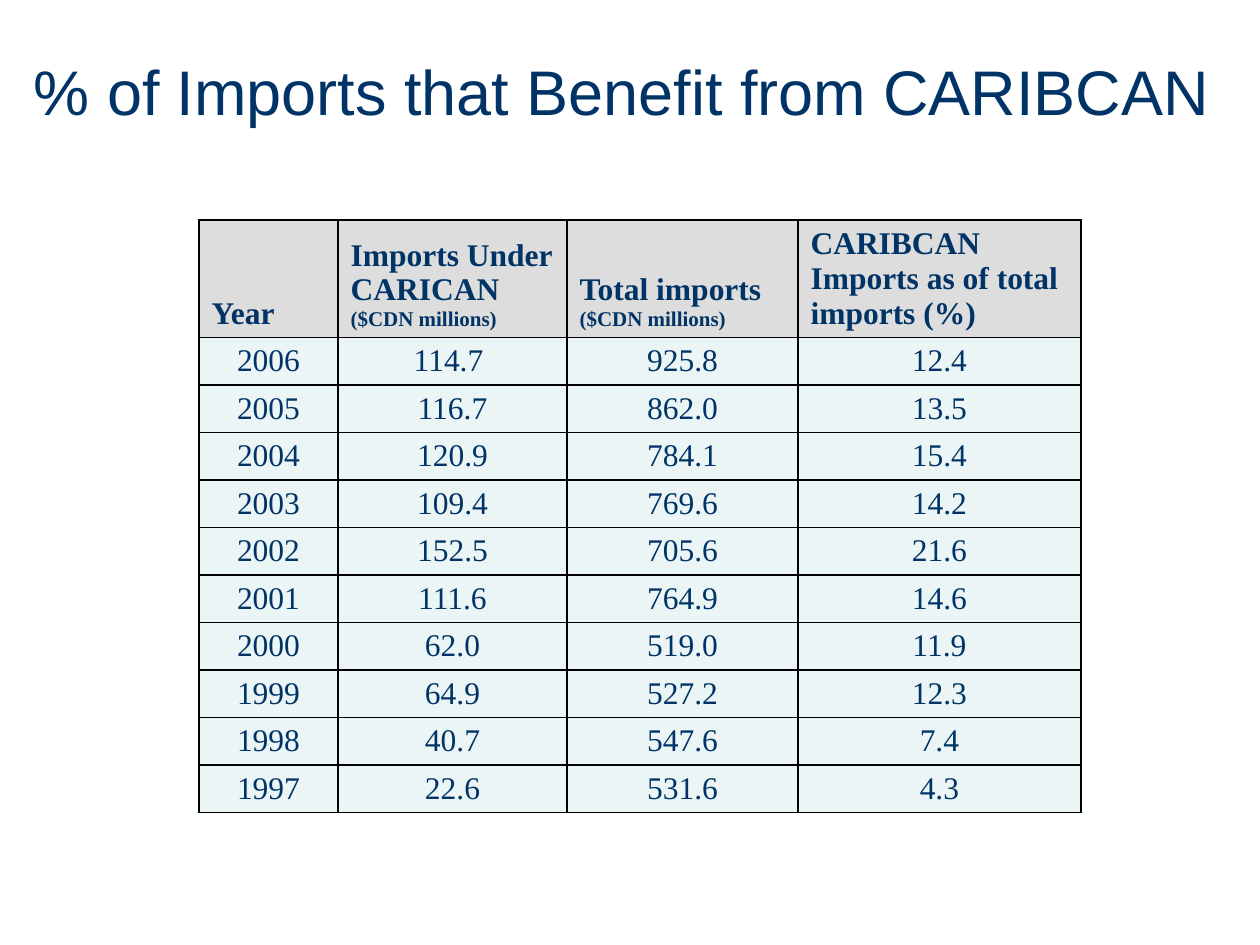
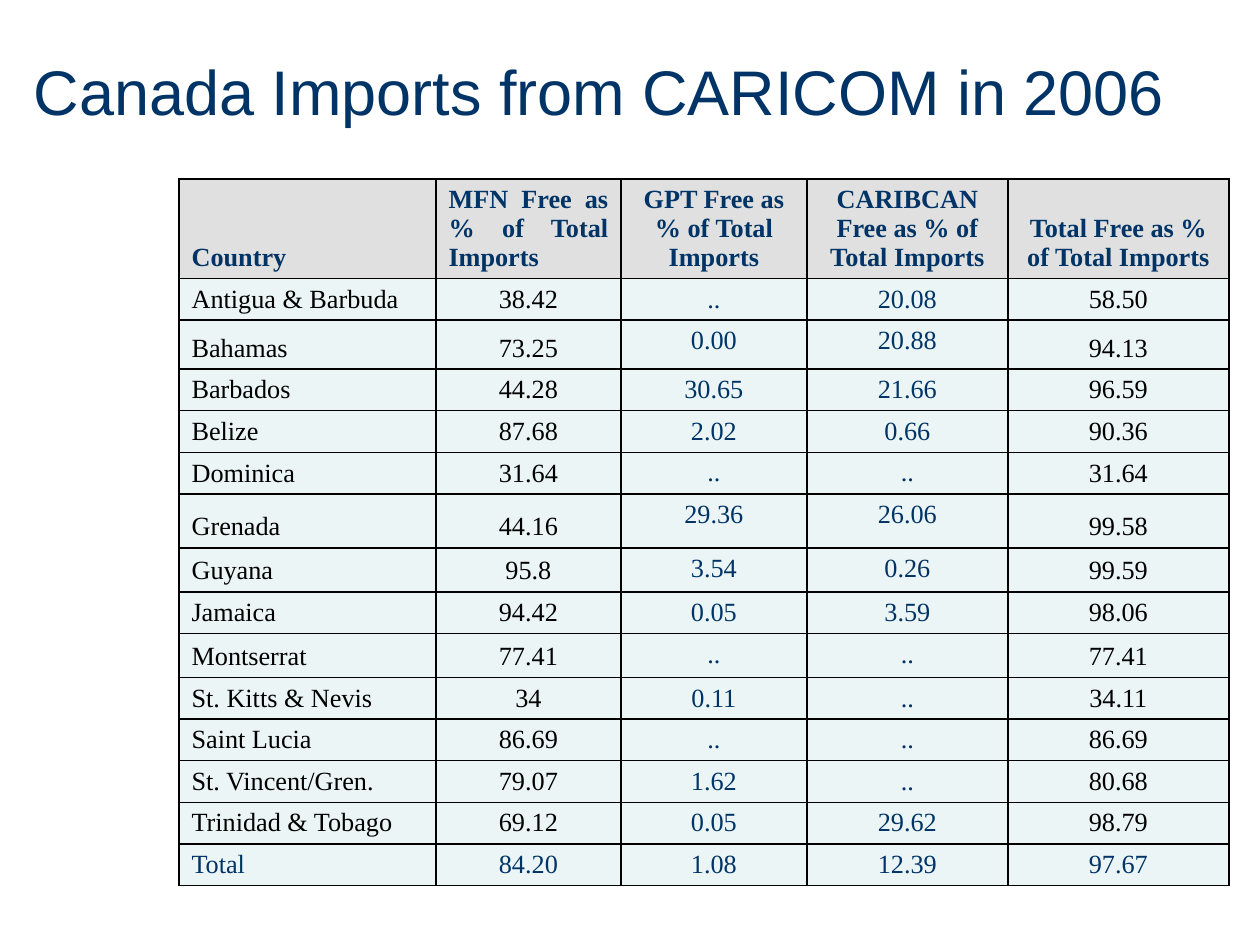
"""Build two slides with import tables for the CARIBCAN trade scheme."""
from dataclasses import dataclass, field

import pptx
import pptx.dml.color
import pptx.enum.text
import pptx.oxml
import pptx.oxml.ns
import pptx.util

SCALE = 914400 / 126
NAVY, BLACK, PALE = "003366", "000000", "D9EDEF"
SERIF, SANS = "Times New Roman", "Arial"
ALIGN = pptx.enum.text.PP_ALIGN
ANCHOR = pptx.enum.text.MSO_ANCHOR
SIDES = {"l": ALIGN.LEFT, "c": ALIGN.CENTER, "j": ALIGN.JUSTIFY}

TRADE = """Year|Imports Under CARICAN\v($CDN millions)|Total imports\n($CDN millions)|CARIBCAN Imports as of total imports (%)
2006|114.7 |925.8|12.4
2005|116.7|862.0|13.5
2004|120.9|784.1|15.4
2003|109.4|769.6|14.2
2002|152.5|705.6|21.6
2001|111.6|764.9|14.6
2000|62.0|519.0|11.9
1999|64.9|527.2|12.3
1998|40.7|547.6|7.4
1997|22.6|531.6|4.3"""

LANDS = """Country|MFN Free as % of Total Imports|GPT Free as % of Total Imports|CARIBCAN Free as % of Total Imports|Total Free as % of Total Imports
Antigua & Barbuda|38.42|..|20.08|58.50
Bahamas|73.25|0.00|20.88|94.13
Barbados|44.28|30.65|21.66|96.59
Belize|87.68|2.02|0.66|90.36
Dominica|31.64|..|..|31.64
Grenada|44.16|29.36|26.06|99.58
Guyana|95.8|3.54|0.26|99.59
Jamaica|94.42|0.05|3.59|98.06
Montserrat|77.41|..|..|77.41
St. Kitts & Nevis|34|0.11|..|34.11
Saint Lucia|86.69|..|..|86.69
St. Vincent/Gren.|79.07|1.62|..|80.68
Trinidad & Tobago|69.12|0.05|29.62|98.79
Total|84.20|1.08|12.39|97.67"""


@dataclass
class Grid:
    title: str
    rows: list[list[str]]
    left: int
    top: int
    widths: list[int]
    head: int
    step: int
    size: int
    shade: str
    heads: str
    sides: str
    raised: set[int] = field(default_factory=set)
    dark: set[int] = field(default_factory=set)
    tall: dict[str, int] = field(default_factory=dict)


def px(count: int) -> int:
    return round(count * SCALE)


def tint(code: str) -> pptx.dml.color.RGBColor:
    return pptx.dml.color.RGBColor.from_string(code)


def split(text: str) -> list[list[str]]:
    """Cut text into rows at each line that holds bars, keeping breaks in cells."""
    cells = text.split("|")
    width = 4 if text is TRADE else 5
    rows, row = [], []
    for cell in cells:
        row.append(cell)
        if len(row) == width:
            last, _, first = cell.rpartition("\n")
            if last:
                row[-1] = last
                rows.append(row)
                row = [first]
            else:
                rows.append(row)
    return rows


def style(para, side, size: int, color: str, face: str, bold: bool) -> None:
    para.alignment = side
    for run in para.runs:
        small = run.text.startswith("($")
        run.font.size = pptx.util.Pt(12 if small else size)
        run.font.name = face
        run.font.bold = bold
        run.font.color.rgb = tint(color)


def frame(cell) -> None:
    """Draw a thin black line on each side of a cell."""
    props = cell._tc.get_or_add_tcPr()
    for place, side in enumerate("LRTB"):
        props.insert(place, pptx.oxml.parse_xml(
            f'<a:ln{side} {pptx.oxml.ns.nsdecls("a")} w="12700"><a:solidFill>'
            f'<a:srgbClr val="{BLACK}"/></a:solidFill></a:ln{side}>'))


def paint(cell, color: str, clear: bool) -> None:
    """Fill a cell, half clear if asked."""
    cell.fill.solid()
    cell.fill.fore_color.rgb = tint(color)
    if clear:
        tag = cell._tc.tcPr.find(".//" + pptx.oxml.ns.qn("a:srgbClr"))
        tag.append(pptx.oxml.parse_xml(
            f'<a:alpha {pptx.oxml.ns.nsdecls("a")} val="50000"/>'))


def draw(deck, grid: Grid) -> None:
    """Add one slide with its title and table."""
    slide = deck.slides.add_slide(deck.slide_layouts[5])
    title = slide.shapes.title
    title.left, title.top, title.width, title.height = map(px, (21, 32, 1218, 116))
    title.text_frame.text = grid.title
    title.text_frame.vertical_anchor = ANCHOR.MIDDLE
    style(title.text_frame.paragraphs[0], ALIGN.LEFT, 36, NAVY, SANS, False)

    highs = [grid.head] + [grid.tall.get(row[0], grid.step) for row in grid.rows[1:]]
    table = slide.shapes.add_table(
        len(highs), len(grid.widths), px(grid.left), px(grid.top),
        px(sum(grid.widths)), px(sum(highs))).table
    table.horz_banding = False
    for col, width in zip(table.columns, grid.widths):
        col.width = px(width)
    for row, high in zip(table.rows, highs):
        row.height = px(high)
    for r, row in enumerate(grid.rows):
        top = r == 0
        for c, text in enumerate(row):
            cell = table.cell(r, c)
            cell.text_frame.text = text
            cell.vertical_anchor = ANCHOR.TOP if c in grid.raised else ANCHOR.BOTTOM
            paint(cell, grid.shade if top else PALE, not top)
            frame(cell)
            black = c in grid.dark and not top and row[0] != "Total"
            side = SIDES[(grid.heads if top else grid.sides)[c]]
            for para in cell.text_frame.paragraphs:
                style(para, side, grid.size, BLACK if black else NAVY, SERIF, top)


GRIDS = [
    Grid("% of Imports that Benefit from CARIBCAN", split(TRADE), 199, 220,
         [139, 229, 231, 283], 117, 47, 18, "DDDDDD", "llll", "cccc"),
    Grid("Canada Imports from CARICOM in 2006", split(LANDS), 179, 179,
         [257, 185, 186, 201, 221], 99, 41, 15, "E0E0E0", "jjccc", "lcccc",
         raised={2, 3}, dark={0, 1, 4},
         tall={"Bahamas": 49, "Grenada": 54, "Guyana": 44, "Montserrat": 44}),
]


def main() -> None:
    deck = pptx.Presentation()
    deck.slide_width, deck.slide_height = px(1260), px(945)
    for grid in GRIDS:
        draw(deck, grid)
    deck.save("out.pptx")


if __name__ == "__main__":
    main()
